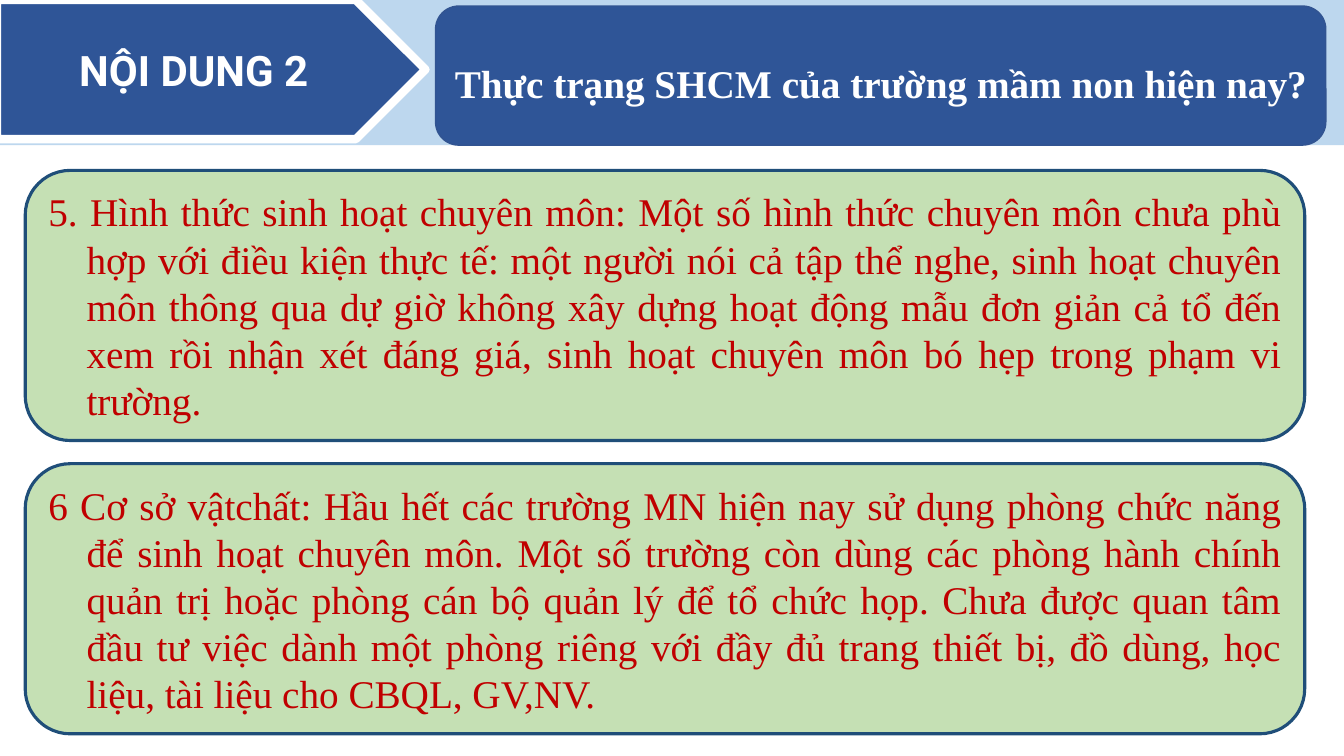
from pptx import Presentation
from pptx.dml.color import RGBColor
from pptx.enum.shapes import MSO_SHAPE
from pptx.enum.text import MSO_ANCHOR, PP_ALIGN
from pptx.util import Inches, Pt

RECTANGLE = MSO_SHAPE.RECTANGLE
PENTAGON = MSO_SHAPE.PENTAGON
ROUNDED = MSO_SHAPE.ROUNDED_RECTANGLE
PANEL = MSO_SHAPE.FLOWCHART_ALTERNATE_PROCESS
MIDDLE = MSO_ANCHOR.MIDDLE
CENTER, JUSTIFY = PP_ALIGN.CENTER, PP_ALIGN.JUSTIFY

# Content
SECTION = "NỘI DUNG 2"
TITLE = "Thực trạng SHCM của trường mầm non hiện nay?"
FINDINGS = [
    "5. Hình thức sinh hoạt chuyên môn: Một số hình thức chuyên môn chưa phù hợp "
    "với điều kiện thực tế: một người nói cả tập thể nghe, sinh hoạt chuyên môn "
    "thông qua dự giờ không xây dựng hoạt động mẫu đơn giản cả tổ đến xem rồi nhận "
    "xét đáng giá, sinh hoạt chuyên môn bó hẹp trong phạm vi trường.",
    "6 Cơ sở vậtchất: Hầu hết các trường MN hiện nay sử dụng phòng chức năng để "
    "sinh hoạt chuyên môn. Một số trường còn dùng các phòng hành chính quản trị "
    "hoặc phòng cán bộ quản lý để tổ chức họp. Chưa được quan tâm đầu tư việc dành "
    "một phòng riêng với đầy đủ trang thiết bị, đồ dùng, học liệu, tài liệu cho "
    "CBQL, GV,NV.",
]

# Style and layout
WHITE, BLUE, RED = "FFFFFF", "2F5597", "C00000"
SERIF = "Times New Roman"
PANEL_TOP, PANEL_HEIGHT, PANEL_GAP = 1.69, 2.68, 0.23
HANGING = 0.38


def color(code):
    return RGBColor.from_string(code)


def add_box(kind, left, top, width, height, fill, line=None, line_width=0):
    box = page.shapes.add_shape(
        kind, Inches(left), Inches(top), Inches(width), Inches(height))
    box.shadow.inherit = False
    box.fill.solid()
    box.fill.fore_color.rgb = color(fill)
    if line:
        box.line.color.rgb = color(line)
        box.line.width = Pt(line_width)
    else:
        box.line.fill.background()
    return box


def write(box, text, font, size, code, bold, align):
    frame = box.text_frame
    frame.word_wrap = True
    frame.vertical_anchor = MIDDLE
    para = frame.paragraphs[0]
    para.text = text
    para.alignment = align
    para.font.name = font
    para.font.size = Pt(size)
    para.font.bold = bold
    para.font.color.rgb = color(code)
    return para


deck = Presentation()
deck.slide_width, deck.slide_height = Inches(13.33), Inches(7.5)
page = deck.slides.add_slide(deck.slide_layouts[5])

# Header band with section arrow and title plate
add_box(RECTANGLE, 0, 0, 13.33, 1.44, "BDD7EE")
arrow = add_box(PENTAGON, -0.03, 0, 4.25, 1.38, BLUE, WHITE, 6)
write(arrow, SECTION, "Roboto", 30, WHITE, True, CENTER)
add_box(ROUNDED, 4.32, 0.06, 8.83, 1.38, BLUE, "325491", 1)

# Title, brought in front of its plate
title = page.shapes.title
title.left, title.top = Inches(4.32), Inches(0.37)
title.width, title.height = Inches(8.83), Inches(0.9)
write(title, TITLE, SERIF, 28, WHITE, True, CENTER)
page.shapes._spTree.append(title._element)

# Finding panels with hanging indents
for row, finding in enumerate(FINDINGS):
    top = PANEL_TOP + row * (PANEL_HEIGHT + PANEL_GAP)
    panel = add_box(PANEL, 0.25, top, 12.69, PANEL_HEIGHT, "C5E0B4", "1F4E79", 2.25)
    para = write(panel, finding, SERIF, 28, RED, False, JUSTIFY)
    properties = para._p.get_or_add_pPr()
    properties.set("marL", str(Inches(HANGING)))
    properties.set("indent", str(-Inches(HANGING)))

deck.save("out.pptx")
